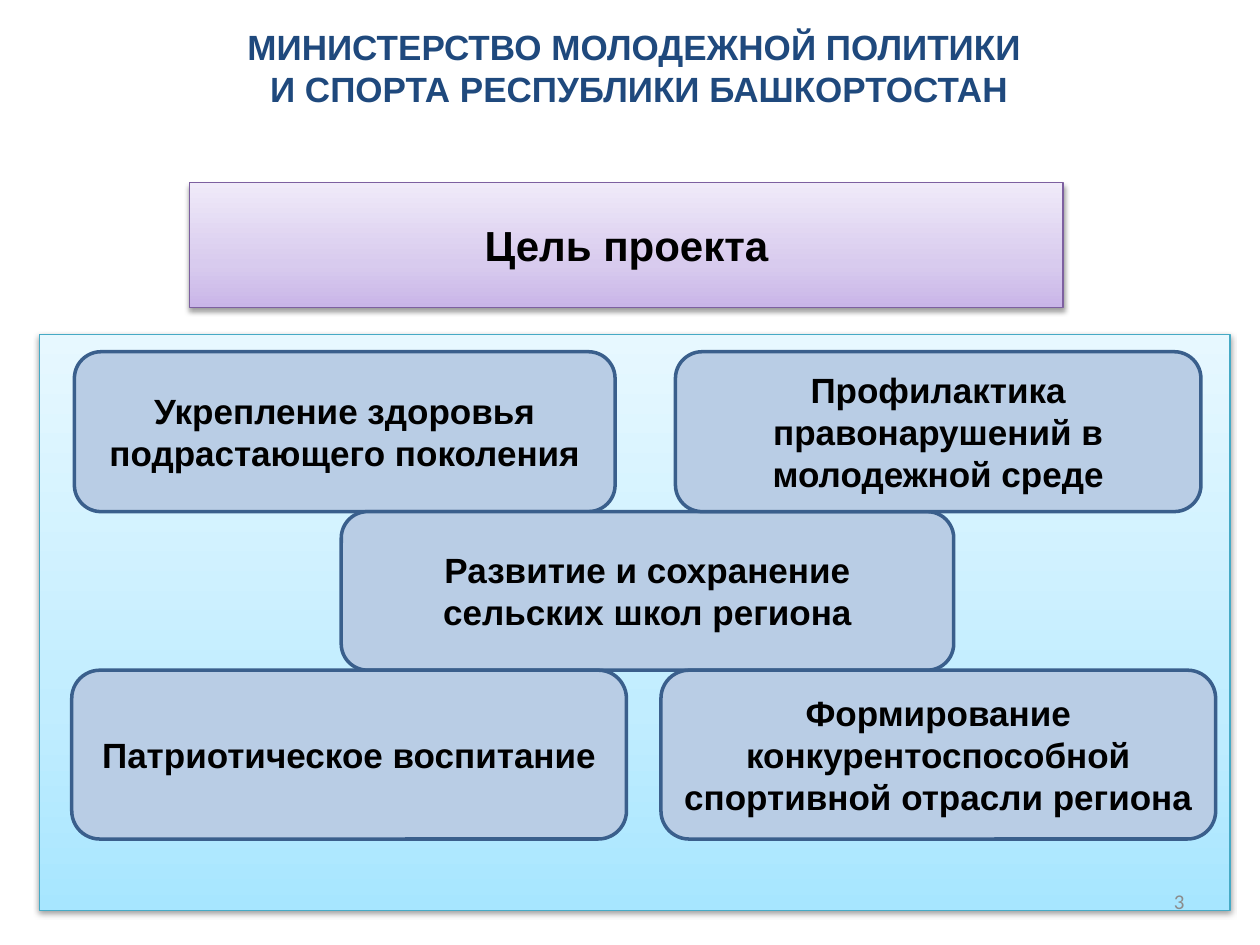
from copy import deepcopy

from lxml import etree
from pptx import Presentation
from pptx.dml.color import RGBColor
from pptx.enum import shapes, text
from pptx.oxml import ns
from pptx.util import Pt

COLORS = {
    "black": "000000",
    "title": "1F497D",
    "number": "8C8C8C",
    "goal_line": "7D60A0",
    "panel_line": "46AAC5",
    "box": "B9CDE5",
    "box_line": "3A5F8C",
}
GOAL_GRADIENT = ["C9B5E8", "D8CBEE", "F0EAF9"]
PANEL_GRADIENT = ["A7E6FF", "C1EDFF", "E7F8FF"]


def write(shape, content, size, color, alignment, bold=True, font="Arial"):
    frame = shape.text_frame
    frame.word_wrap = True
    frame.text = content
    for paragraph in frame.paragraphs:
        paragraph.alignment = alignment
        for run in paragraph.runs:
            run.font.name = font
            run.font.size = Pt(size)
            run.font.bold = bold
            run.font.color.rgb = RGBColor.from_string(COLORS[color])


def add_box(slide, kind, bounds, line, width):
    shape = slide.shapes.add_shape(kind, *map(Pt, bounds))
    shape.shadow.inherit = False
    shape.line.color.rgb = RGBColor.from_string(COLORS[line])
    shape.line.width = Pt(width)
    shape.text_frame.vertical_anchor = text.MSO_ANCHOR.MIDDLE
    return shape


presentation = Presentation()
presentation.slide_width = Pt(720)
presentation.slide_height = Pt(540)
slide = presentation.slides.add_slide(presentation.slide_layouts[6])
center = text.PP_ALIGN.CENTER

title = slide.shapes.add_textbox(Pt(56.2), Pt(10.8), Pt(617.8), Pt(55.4))
write(title, "МИНИСТЕРСТВО МОЛОДЕЖНОЙ ПОЛИТИКИ \nИ СПОРТА РЕСПУБЛИКИ БАШКОРТОСТАН",
      20, "title", center)
title.text_frame.auto_size = text.MSO_AUTO_SIZE.SHAPE_TO_FIT_TEXT

panels = [
    ("Цель проекта", (108.5, 104.4, 499, 71.3), GOAL_GRADIENT, "goal_line"),
    ("", (22.5, 191.3, 680.4, 329), PANEL_GRADIENT, "panel_line"),
]
for content, bounds, gradient, line in panels:
    panel = add_box(slide, shapes.MSO_SHAPE.RECTANGLE, bounds, line, 0.75)
    panel.fill.gradient()
    panel.fill.gradient_angle = 90
    properties = panel._element.spPr
    first_stop = properties.find(".//" + ns.qn("a:gs"))
    first_stop.addnext(deepcopy(first_stop))
    for stop, position, color in zip(panel.fill.gradient_stops, (0, 0.35, 1), gradient):
        stop.position = position
        stop.color.rgb = RGBColor.from_string(color)
    shadow = etree.SubElement(
        properties.find(ns.qn("a:effectLst")), ns.qn("a:outerShdw"),
        blurRad=str(Pt(3.1)), dist=str(Pt(1.6)), dir="5400000", rotWithShape="0")
    shadow_color = etree.SubElement(shadow, ns.qn("a:srgbClr"), val=COLORS["black"])
    etree.SubElement(shadow_color, ns.qn("a:alpha"), val="38000")
    if content:
        write(panel, content, 24, "black", center)

goals = [
    ("Укрепление здоровья подрастающего поколения", (42.5, 201, 309, 91.4)),
    ("Развитие и сохранение сельских школ региона", (195, 292.4, 350, 90.6)),
    ("Профилактика правонарушений в молодежной среде", (386, 201, 300.3, 91.4)),
    ("Патриотическое воспитание", (41, 383, 317, 96.5)),
    ("Формирование конкурентоспособной спортивной отрасли региона",
     (377.7, 383, 317, 96.5)),
]
for content, bounds in goals:
    box = add_box(slide, shapes.MSO_SHAPE.ROUNDED_RECTANGLE, bounds, "box_line", 2)
    box.fill.solid()
    box.fill.fore_color.rgb = RGBColor.from_string(COLORS["box"])
    write(box, content, 20, "black", center)

number = slide.shapes.add_textbox(Pt(516), Pt(500.5), Pt(168), Pt(28.8))
number.text_frame.vertical_anchor = text.MSO_ANCHOR.MIDDLE
write(number, "3", 12, "number", text.PP_ALIGN.RIGHT, False, "Calibri")

presentation.save("out.pptx")
